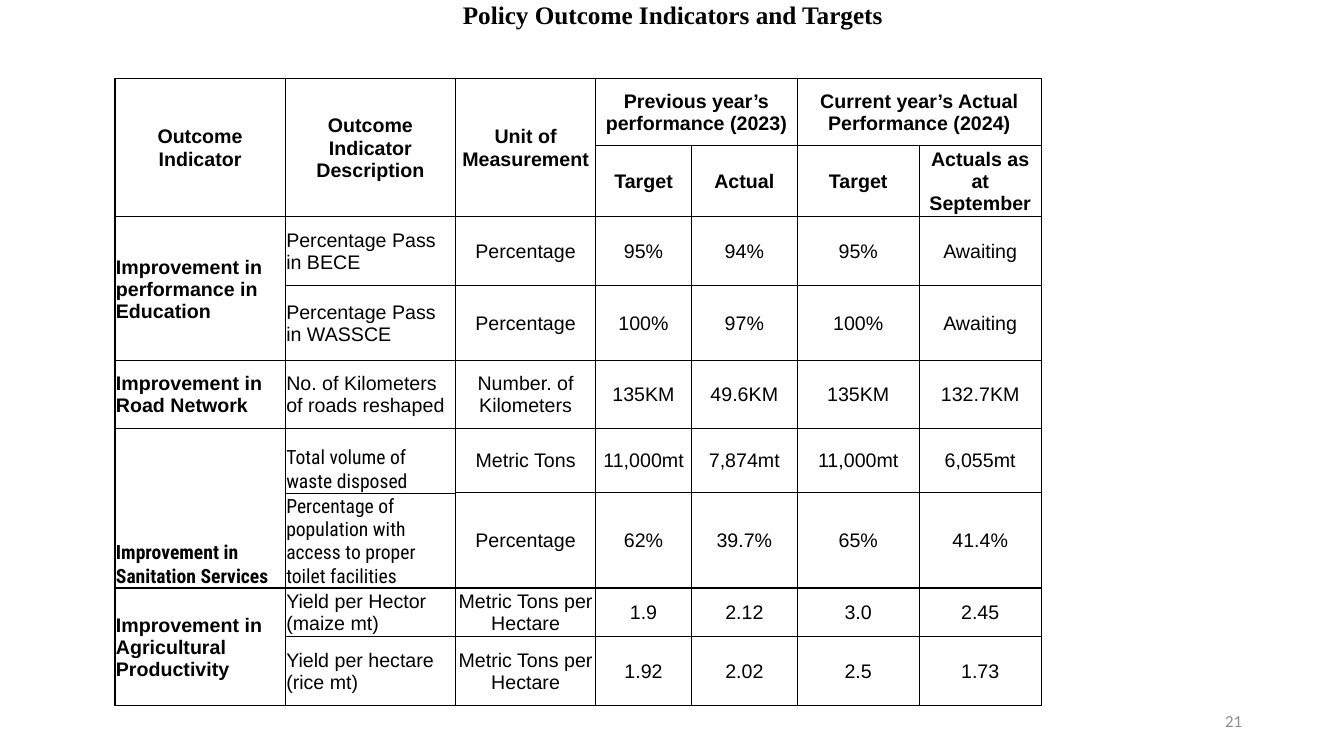
import lxml.etree
import pptx
import pptx.dml.color
import pptx.enum.text
import pptx.oxml.ns
import pptx.util

ALIGN = pptx.enum.text.PP_ALIGN
ANCHOR = pptx.enum.text.MSO_ANCHOR
qn = pptx.oxml.ns.qn

WIDTHS = [16.9, 16.9, 13.9, 9.5, 10.5, 12.1, 12.1]
HEIGHTS = [6.6, 6.6, 6.8, 7.5, 6.7, 6.4, 9.2, 4.5, 6.9]
HEADS = 2
ROWS = [
    ["Outcome Indicator", "Outcome Indicator Description", "Unit of Measurement",
     "Previous year’s performance (2023)", None,
     "Current year’s Actual Performance (2024)", None],
    [None, None, None, "Target", "Actual", "Target", "Actuals as at September"],
    ["Improvement in performance in Education", "Percentage Pass in BECE",
     "Percentage", "95%", "94%", "95%", "Awaiting"],
    [None, "Percentage Pass in WASSCE", "Percentage", "100%", "97%", "100%", "Awaiting"],
    ["Improvement in Road Network", "No. of Kilometers of roads reshaped",
     "Number. of Kilometers", "135KM", "49.6KM", "135KM", "132.7KM"],
    ["Improvement in Sanitation Services", "Total volume of waste disposed",
     "Metric Tons", "11,000mt", "7,874mt", "11,000mt", "6,055mt"],
    [None, "Percentage of population with access to proper toilet facilities",
     "Percentage", "62%", "39.7%", "65%", "41.4%"],
    ["Improvement in Agricultural Productivity", "Yield per Hector (maize mt)",
     "Metric Tons per Hectare", "1.9", "2.12", "3.0", "2.45"],
    [None, "Yield per hectare (rice mt)", "Metric Tons per Hectare",
     "1.92", "2.02", "2.5", "1.73"],
]
# First and last cell of each merged block, as (row, column).
SPANS = [((0, 0), (1, 0)), ((0, 1), (1, 1)), ((0, 2), (1, 2)),
         ((0, 3), (0, 4)), ((0, 5), (0, 6)),
         ((2, 0), (3, 0)), ((5, 0), (6, 0)), ((7, 0), (8, 0))]
WASTE, TOILET = (5, 1), (6, 1)
NARROW = {(5, 0), WASTE, TOILET}
THIN = {(WASTE, "lnB"), (TOILET, "lnT")}


def tint(code):
    return pptx.dml.color.RGBColor.from_string(code)


def put(item, values):
    for name, value in values.items():
        setattr(item, name, value)


class Deck:
    """Slide on a grid with ten columns and ten rows to the inch."""
    ink, grey = "000000", "8C8C8C"

    def __init__(self, cols, rows):
        self.show = pptx.Presentation()
        put(self.show, {"slide_width": self.unit(cols), "slide_height": self.unit(rows)})
        self.slide = self.show.slides.add_slide(self.show.slide_layouts[5])

    def unit(self, count):
        return pptx.util.Inches(count / 10)

    def place(self, *box):
        return [self.unit(side) for side in box]

    def label(self, frame, text, align, color, size, **font):
        para = frame.paragraphs[0]
        para.alignment = align
        run = para.add_run()
        run.text = text
        put(run.font, {"size": pptx.util.Pt(size), **font})
        run.font.color.rgb = tint(color)
        return para

    def title(self, text, *box):
        head = self.slide.shapes.title
        put(head, dict(zip(("left", "top", "width", "height"), self.place(*box))))
        frame = head.text_frame
        put(frame, {"margin_top": 0, "margin_bottom": 0, "word_wrap": True,
                    "vertical_anchor": ANCHOR.MIDDLE,
                    "auto_size": pptx.enum.text.MSO_AUTO_SIZE.NONE})
        para = self.label(frame, text, ALIGN.CENTER, self.ink, 18,
                          name="Times New Roman", bold=True)
        para.line_spacing = 0.9

    def number(self, text, *box):
        frame = self.slide.shapes.add_textbox(*self.place(*box)).text_frame
        put(frame, {"word_wrap": True, "vertical_anchor": ANCHOR.MIDDLE})
        self.label(frame, text, ALIGN.RIGHT, self.grey, 12, name="Calibri")

    def border(self, cell, spot):
        props = cell._tc.get_or_add_tcPr()
        for side in ("lnL", "lnR", "lnT", "lnB"):
            width = pptx.util.Pt(0.5 if (spot, side) in THIN else 1)
            line = lxml.etree.SubElement(props, qn("a:" + side), w=str(int(width)))
            fill = lxml.etree.SubElement(line, qn("a:solidFill"))
            lxml.etree.SubElement(fill, qn("a:srgbClr"), val=self.ink)

    def cell(self, cell, spot, text):
        row, col = spot
        narrow = spot in NARROW
        self.border(cell, spot)
        cell.fill.background()
        edge = self.unit(0.1)
        put(cell, {"margin_left": edge, "margin_right": edge, "margin_top": edge,
                   "margin_bottom": 0,
                   "vertical_anchor": ANCHOR.BOTTOM if narrow else ANCHOR.MIDDLE})
        if text:
            align = ALIGN.CENTER if row < HEADS or col > 1 else ALIGN.LEFT
            self.label(cell.text_frame, text, align, self.ink, 14,
                       name="Roboto Condensed" if narrow else "Arial",
                       bold=row < HEADS or col == 0)

    def table(self, left, top):
        box = self.place(left, top, sum(WIDTHS), sum(HEIGHTS))
        grid = self.slide.shapes.add_table(len(ROWS), len(WIDTHS), *box).table
        put(grid, {"first_row": False, "horz_banding": False})
        for col, width in zip(grid.columns, WIDTHS):
            col.width = self.unit(width)
        for row, height in zip(grid.rows, HEIGHTS):
            row.height = self.unit(height)
        for first, last in SPANS:
            grid.cell(*first).merge(grid.cell(*last))
        for row, texts in enumerate(ROWS):
            for col, text in enumerate(texts):
                self.cell(grid.cell(row, col), (row, col), text)


def main():
    deck = Deck(133.33, 75)
    deck.title("Policy Outcome Indicators and Targets", 21.8, 0, 89.9, 3.3)
    deck.number("21", 94.2, 69.5, 30, 4)
    deck.table(11.4, 7.8)
    deck.show.save("out.pptx")


if __name__ == "__main__":
    main()
